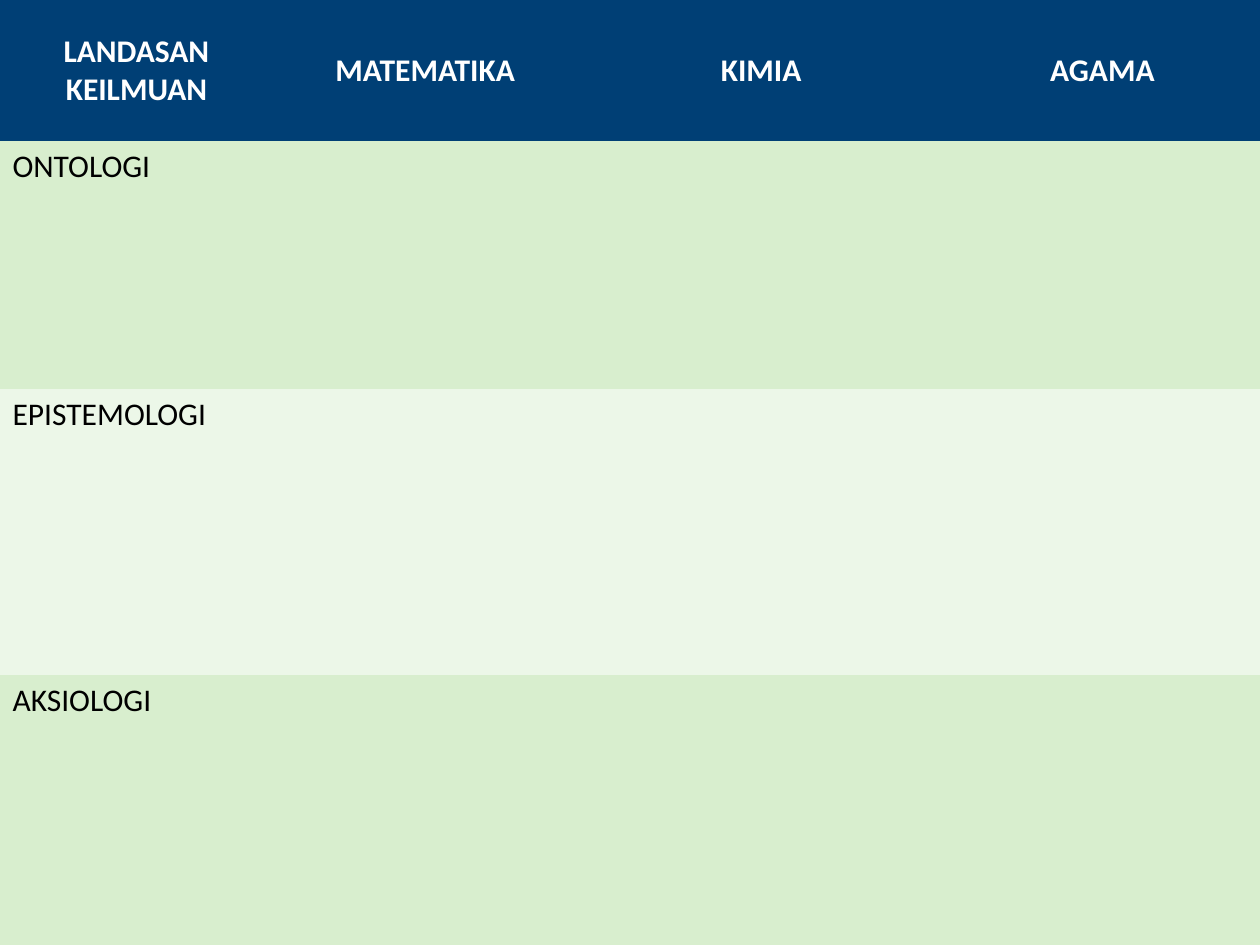
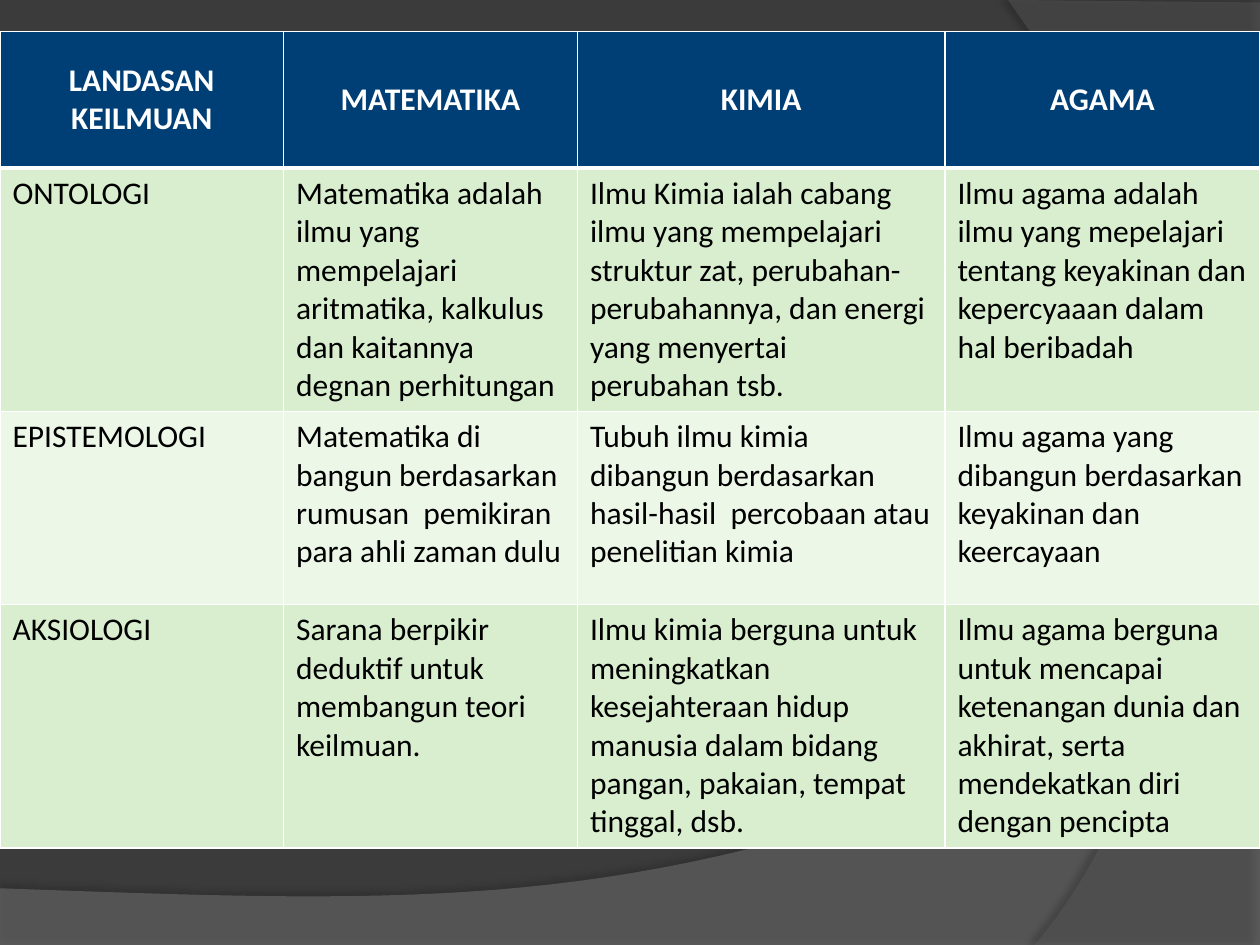
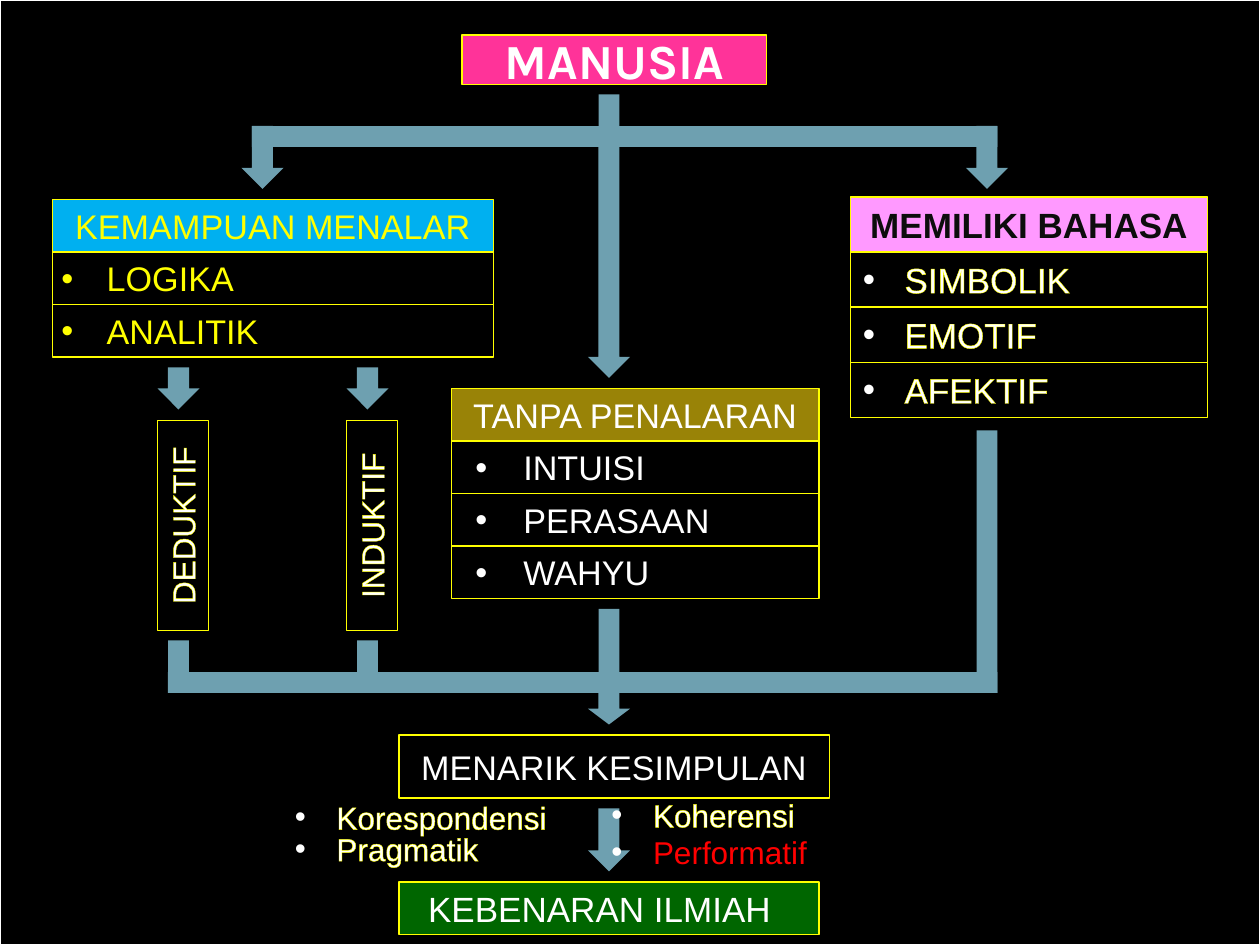
from lxml.etree import SubElement
from pptx import Presentation
from pptx.dml.color import RGBColor
from pptx.enum.shapes import MSO_SHAPE
from pptx.enum.text import MSO_ANCHOR, PP_ALIGN
from pptx.oxml import parse_xml
from pptx.oxml.ns import qn
from pptx.util import Emu, Inches, Pt

# Colours
WHITE = RGBColor(0xFF, 0xFF, 0xFF)
BLACK = RGBColor(0x00, 0x00, 0x00)
INK = RGBColor(0x0D, 0x0D, 0x0D)
CHARCOAL = RGBColor(0x3B, 0x3B, 0x3B)
WAVE_GREY = RGBColor(0x7F, 0x7F, 0x7F)
EDGE_GREY = RGBColor(0x5E, 0x5E, 0x5E)
NAVY = RGBColor(0x00, 0x3F, 0x75)
GREEN_BAND = RGBColor(0xD8, 0xEE, 0xCE)
PALE_BAND = RGBColor(0xEC, 0xF7, 0xE8)
YELLOW = RGBColor(0xFF, 0xFF, 0x00)
RED = RGBColor(0xFF, 0x00, 0x00)
HOT_PINK = RGBColor(0xFF, 0x33, 0x99)
PINK = RGBColor(0xFF, 0x99, 0xFF)
SKY = RGBColor(0x00, 0xB0, 0xF0)
OLIVE = RGBColor(0x99, 0x83, 0x07)
DARK_GREEN = RGBColor(0x00, 0x66, 0x00)
STEEL = RGBColor(0x6E, 0xA0, 0xB0)
SILVER = RGBColor(0xD5, 0xD2, 0xCF)

# Grid: 120 columns by 90 rows on a 10 by 7.5 inch slide
UNIT = Inches(10) // 120
NO_STYLE = "{2D5ABB26-0587-4C30-8999-92F81FD0307C}"
A_NS = 'xmlns:a="http://schemas.openxmlformats.org/drawingml/2006/main"'


def grid(*values):
    return [Emu(round(v * UNIT)) for v in values]


def solid(parent, color):
    fill = SubElement(parent, qn("a:solidFill"))
    return SubElement(fill, qn("a:srgbClr"), val=str(color))


def write(tf, text, size=18, font="Arial", color=WHITE, bold=False, align=None,
          outline=None, bullet=None, indent=0.33, hang=None):
    """Write one paragraph; outline is (colour, points), bullet is its colour."""
    p = tf.paragraphs[0]
    p.alignment = align
    r = p.add_run()
    r.text = text
    r.font.size, r.font.name, r.font.bold = Pt(size), font, bold
    r.font.color.rgb = color
    if outline:
        line_color, width = outline
        ln = parse_xml(f'<a:ln {A_NS} w="{Pt(width)}"/>')
        solid(ln, line_color)
        r.font._element.insert(0, ln)
    if bullet is not None:
        pPr = p._p.get_or_add_pPr()
        pPr.set("marL", str(Inches(indent)))
        pPr.set("indent", str(-Inches(hang or indent)))
        SubElement(SubElement(pPr, qn("a:buClr")), qn("a:srgbClr"), val=str(bullet))
        SubElement(pPr, qn("a:buFont"), typeface="Arial")
        SubElement(pPr, qn("a:buChar"), char="•")


def bezier(start, c1, c2, end, steps=40):
    """Points along a cubic curve, without its start."""
    for i in range(1, steps + 1):
        t = i / steps
        weights = ((1 - t) ** 3, 3 * t * (1 - t) ** 2, 3 * t * t * (1 - t), t ** 3)
        yield tuple(sum(w * pt[axis] for w, pt in zip(weights, (start, c1, c2, end)))
                    for axis in (0, 1))


class Deck:
    def __init__(self):
        self.prs = Presentation()
        self.prs.slide_width, self.prs.slide_height = Inches(10), Inches(7.5)
        self.s = None

    def slide(self):
        self.s = self.prs.slides.add_slide(self.prs.slide_layouts[6])
        fill = self.s.background.fill
        fill.solid()
        fill.fore_color.rgb = CHARCOAL
        self.backdrop()

    def style(self, sp, fill=None, line=None):
        sp.shadow.inherit = False
        if fill is None:
            sp.fill.background()
        else:
            sp.fill.solid()
            sp.fill.fore_color.rgb = fill
        if line is None:
            sp.line.fill.background()
        else:
            sp.line.color.rgb = line
            sp.line.width = Pt(0.75)

    def shape(self, at, fill=None, line=None, kind=MSO_SHAPE.RECTANGLE):
        sp = self.s.shapes.add_shape(kind, *grid(*at))
        self.style(sp, fill, line)
        return sp

    def arrow(self, *at):
        self.shape(at, STEEL, kind=MSO_SHAPE.DOWN_ARROW)

    def bar(self, *at):
        self.shape(at, STEEL)

    def box(self, text, at, fill=None, inset=0.05, right=None, turn=0, **fmt):
        """A yellow-framed box; inset None keeps default margins and top text."""
        sp = self.shape(at, fill, YELLOW)
        sp.rotation = turn
        tf = sp.text_frame
        tf.word_wrap = True
        tf.vertical_anchor = MSO_ANCHOR.TOP if inset is None else MSO_ANCHOR.MIDDLE
        if inset is not None:
            tf.margin_left = tf.margin_top = tf.margin_bottom = Inches(inset)
            tf.margin_right = Inches(right or inset)
        fmt.setdefault("align", PP_ALIGN.LEFT if "bullet" in fmt else PP_ALIGN.CENTER)
        write(tf, text, **fmt)

    def stack(self, at, head, items, head_fmt, item_fmt):
        """A heading box with equal item boxes below it."""
        x, y, w, h = at
        self.box(head, at, **head_fmt)
        for i, item in enumerate(items, 1):
            self.box(item, (x, y + i * h, w, h), **item_fmt)

    def note(self, text, x, y, **fmt):
        tf = self.s.shapes.add_textbox(*grid(x, y, 32, 5.25)).text_frame
        tf.word_wrap = True
        write(tf, text, bullet=WHITE, outline=(YELLOW, 0.75), **fmt)

    def wave(self, points, color, alpha, shade, distance, angle):
        pts = [(Inches(x), Inches(y)) for x, y in points]
        builder = self.s.shapes.build_freeform(*pts[0])
        builder.add_line_segments(pts[1:], close=True)
        sp = builder.convert_to_shape()
        self.style(sp, color)
        clr = sp._element.spPr.find(qn("a:solidFill"))[0]
        SubElement(clr, qn("a:alpha"), val=str(alpha * 1000))
        effects = sp._element.spPr.find(qn("a:effectLst"))
        shadow = SubElement(effects, qn("a:outerShdw"), blurRad=str(Pt(4)),
                            dist=str(Pt(distance)), dir=str(angle * 60000))
        clr = SubElement(shadow, qn("a:srgbClr"), val=str(BLACK))
        SubElement(clr, qn("a:alpha"), val=str(shade * 1000))

    def backdrop(self):
        sweep = bezier((10, 5.2), (5.59, 7.29), (3.91, 7.19), (0, 7.05))
        self.wave([(0, 7.05), (0, 7.51), (10, 7.51), (10, 5.2), *sweep],
                  WAVE_GREY, 45, 35, 3.5, 270)
        edge = bezier((8.21, 7.5), (9.35, 6.19), (10.18, 3), (8, 0))
        self.wave([(10, 0.02), (10, 7.5), (8.21, 7.5), *edge],
                  EDGE_GREY, 40, 45, 4, 180)

    def border(self, cell, row):
        tcPr = cell._tc.get_or_add_tcPr()
        heavy = {0: "lnB", 1: "lnT"}.get(row)
        for i, side in enumerate(("lnL", "lnR", "lnT", "lnB")):
            ln = parse_xml(f'<a:{side} {A_NS} w="{Pt(3 if side == heavy else 1)}"/>')
            solid(ln, WHITE)
            tcPr.insert(i, ln)

    def table(self, top, widths, heights, rows, bordered=False):
        frame = self.s.shapes.add_table(len(rows), len(widths),
                                        *grid(0, top, sum(widths), sum(heights)))
        tbl = frame.table
        tbl.first_row = tbl.horz_banding = False
        tbl._tbl.tblPr.find(qn("a:tableStyleId")).text = NO_STYLE
        for col, width in zip(tbl.columns, grid(*widths)):
            col.width = width
        for i, (texts, height) in enumerate(zip(rows, grid(*heights))):
            tbl.rows[i].height = height
            for cell, text in zip(tbl.rows[i].cells, texts):
                cell.fill.solid()
                if i == 0:
                    cell.fill.fore_color.rgb = NAVY
                    cell.vertical_anchor = MSO_ANCHOR.MIDDLE
                    write(cell.text_frame, text, font="Calibri", bold=True,
                          align=PP_ALIGN.CENTER)
                else:
                    cell.fill.fore_color.rgb = GREEN_BAND if i % 2 else PALE_BAND
                    if text:
                        write(cell.text_frame, text, font="Calibri", color=BLACK)
                if bordered:
                    self.border(cell, i)


HEADER = ["LANDASAN KEILMUAN", "MATEMATIKA", "KIMIA", "AGAMA"]
FOUNDATIONS = {
    "ONTOLOGI": [
        "Matematika adalah ilmu yang mempelajari aritmatika, kalkulus dan kaitannya "
        "degnan perhitungan",
        "Ilmu Kimia ialah cabang ilmu yang mempelajari struktur zat, "
        "perubahan-perubahannya, dan energi yang menyertai perubahan tsb.",
        "Ilmu agama adalah ilmu yang mepelajari tentang keyakinan dan kepercyaaan "
        "dalam hal beribadah"],
    "EPISTEMOLOGI": [
        "Matematika di bangun berdasarkan rumusan  pemikiran para ahli zaman dulu",
        "Tubuh ilmu kimia dibangun berdasarkan hasil-hasil  percobaan atau "
        "penelitian kimia",
        "Ilmu agama yang dibangun berdasarkan keyakinan dan keercayaan"],
    "AKSIOLOGI": [
        "Sarana berpikir deduktif untuk membangun teori keilmuan.",
        "Ilmu kimia berguna untuk meningkatkan kesejahteraan hidup manusia dalam "
        "bidang pangan, pakaian, tempat tinggal, dsb.",
        "Ilmu agama berguna untuk mencapai ketenangan dunia dan akhirat, serta "
        "mendekatkan diri dengan pencipta"],
}


def empty_table(deck):
    deck.slide()
    deck.table(0, [26, 29, 35, 30], [13.45, 23.6, 27.25, 27.25],
               [HEADER] + [[name, "", "", ""] for name in FOUNDATIONS])


def filled_table(deck):
    deck.slide()
    deck.table(3, [27, 28, 35, 30], [13, 18.4, 18.4, 18.4],
               [HEADER] + [[name, *texts] for name, texts in FOUNDATIONS.items()],
               bordered=True)


def reasoning_chart(deck):
    deck.slide()
    deck.shape((0, 0, 120, 90), BLACK, WHITE)
    deck.box("MANUSIA", (44, 3.33, 29, 4.7), HOT_PINK, size=28, font="Karla", bold=True)

    # Three abilities
    glow = (YELLOW, 0.75)
    reason = dict(size=19.5, color=YELLOW)
    deck.stack((5, 19, 42, 5), "KEMAMPUAN MENALAR", ["LOGIKA", "ANALITIK"],
               dict(reason, fill=SKY),
               dict(reason, bullet=YELLOW, indent=0.38, hang=0.36))
    deck.stack((81, 18.75, 34, 5.25), "MEMILIKI BAHASA",
               ["SIMBOLIK", "EMOTIF", "AFEKTIF"],
               dict(fill=PINK, inset=None, size=20, color=INK, bold=True,
                    outline=(SILVER, 1)),
               dict(inset=None, size=20, outline=glow, bullet=WHITE))
    deck.stack((43, 37, 35, 5), "TANPA PENALARAN", ["INTUISI", "PERASAAN", "WAHYU"],
               dict(fill=OLIVE, size=19.5),
               dict(size=19.5, bullet=WHITE, indent=0.52, hang=0.38))

    # Two ways of reasoning
    for x, text in ((15, "DEDUKTIF"), (33, "INDUKTIF")):
        deck.box(text, (x - 7.57, 47.6, 20, 4.85), inset=None, turn=270, outline=glow)
        deck.arrow(x, 35, 4, 4)

    # Conclusion and truth
    deck.box("MENARIK KESIMPULAN", (38, 70, 41, 6), size=19.5)
    deck.box("KEBENARAN ILMIAH", (38, 84, 40, 5), DARK_GREEN, right=0.2, size=20)
    deck.arrow(56, 77, 4, 6)
    deck.note("Koherensi", 57.05, 75.2)
    deck.note("Performatif", 57.05, 78.7, color=RED)
    deck.note("Korespondensi", 26.9, 75.42)
    deck.note("Pragmatik", 26.9, 78.42)

    # Flow into the conclusion
    deck.arrow(56, 66, 4, 3)
    deck.bar(16, 64, 79, 2)
    for x, y, height in ((57, 58, 7), (34, 61, 5), (93, 41, 25), (16, 61, 5)):
        deck.bar(x, y, 2, height)

    # Flow out of the title
    deck.bar(57, 9, 2, 5)
    deck.bar(24, 12, 71, 2)
    for x, y, height in ((23, 12, 6), (92, 12, 6), (56, 13, 23)):
        deck.arrow(x, y, 4, height)


def main():
    deck = Deck()
    empty_table(deck)
    filled_table(deck)
    reasoning_chart(deck)
    deck.prs.save("out.pptx")


if __name__ == "__main__":
    main()
